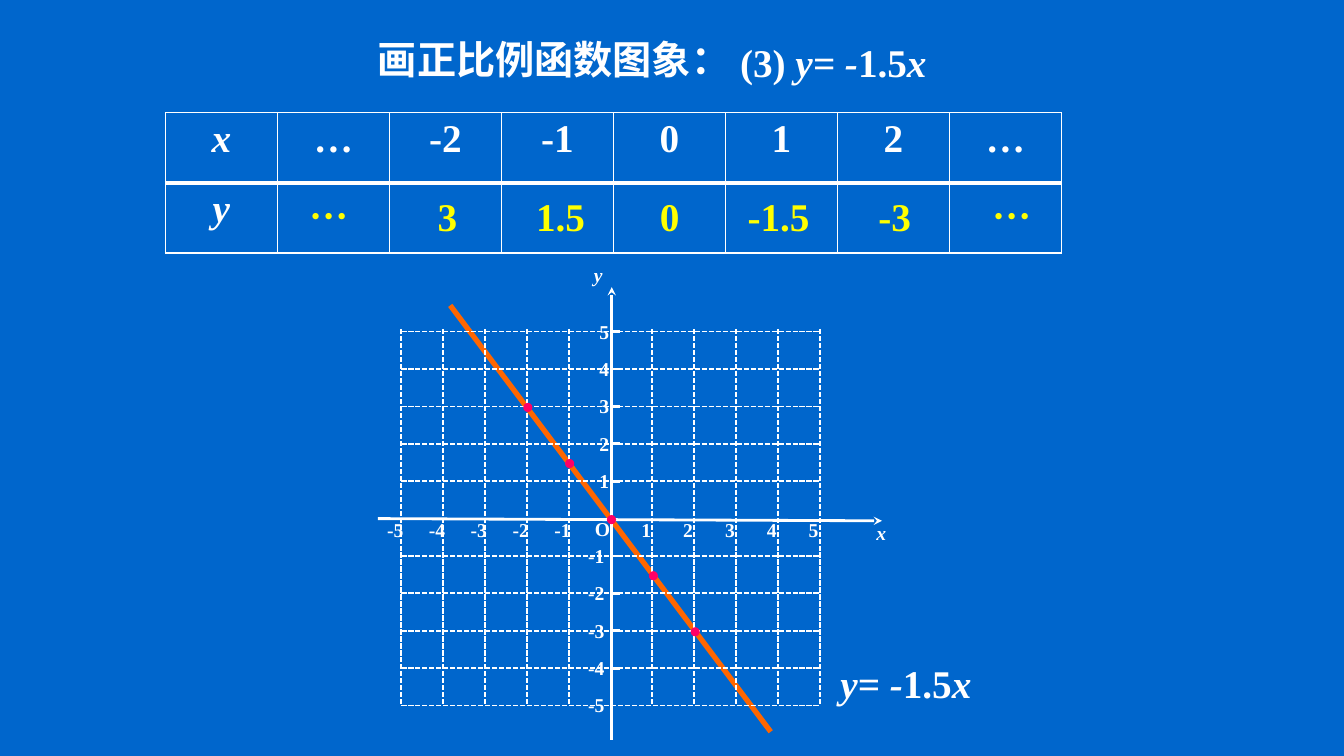
from lxml import etree
from pptx import Presentation
from pptx import util as u
from pptx.dml.color import RGBColor
from pptx.enum import dml, shapes, text
from pptx.oxml import ns

BLUE = RGBColor(0x00, 0x66, 0xCC)
WHITE = RGBColor(0xFF, 0xFF, 0xFF)
YELLOW = RGBColor(0xFF, 0xFF, 0x00)
ORANGE = RGBColor(0xFF, 0x66, 0x00)
PINK = RGBColor(0xFF, 0x00, 0x66)
SERIF = "Times New Roman"
HAN = "Noto Sans CJK SC"
LEFT, MID = text.PP_ALIGN.LEFT, text.PP_ALIGN.CENTER
RULE = [("y= -", True), ("1.5", False), ("x", True)]


def sub(node, tag, **attrs):
    """Append a drawing element to a node."""
    return etree.SubElement(node, ns.qn(tag), **attrs)


def style(para, size, color=WHITE, face=SERIF, align=MID):
    """Set the bold font and alignment of a paragraph."""
    font = para.font
    font.size, font.bold, font.name = u.Pt(size), True, face
    font.color.rgb = color
    para.alignment = align


def label(slide, box, runs, size, color=WHITE, face=SERIF, align=MID):
    """Write runs of (words, italic) in a text box."""
    frame = slide.shapes.add_textbox(*[u.Inches(v) for v in box]).text_frame
    frame.word_wrap = False
    para = frame.paragraphs[0]
    style(para, size, color, face, align)
    for words, slant in runs:
        run = para.add_run()
        run.text, run.font.italic = words, slant
        if face != SERIF:
            sub(run.font._element, "a:latin", typeface=face)
            sub(run.font._element, "a:ea", typeface=HAN)


def line(slide, start, end, width, color=WHITE, dash=False, arrow=False):
    """Draw a straight line between two points."""
    item = slide.shapes.add_connector(
        shapes.MSO_CONNECTOR.STRAIGHT, *[u.Inches(v) for v in (*start, *end)])
    item.line.width = u.Pt(width)
    item.line.color.rgb = color
    if dash:
        item.line.dash_style = dml.MSO_LINE.SQUARE_DOT
    if arrow:
        sub(item.line._get_or_add_ln(), "a:tailEnd", type="stealth")
    sub(item._element.spPr, "a:effectLst")


def edge(cell, widths):
    """Give a cell white borders in the order left, right, top, bottom."""
    props = cell._tc.get_or_add_tcPr()
    for spot, (side, width) in enumerate(zip("LRTB", widths)):
        ln = etree.Element(ns.qn(f"a:ln{side}"), w=str(u.Pt(width)))
        sub(sub(ln, "a:solidFill"), "a:srgbClr", val=str(WHITE))
        props.insert(spot, ln)


def title(slide, left, top):
    """Place the heading and its formula."""
    label(slide, (left, top, 9, 1.25), [("画正比例函数图象：", False)], 28,
          face="Arial", align=LEFT)
    label(slide, (left + 3.53, top + 0.03, 2.17, 0.57),
          [("(3) ", False)] + RULE, 28)


def values(slide, left, top, width, height):
    """Place the table of x and y with the answers over its second row."""
    heads = ["x", "…", "-2", "-1", "0", "1", "2", "…"]
    marks = ["…", "3", "1.5", "0", "-1.5", "-3", "…"]
    shifts = [-0.04, 0.02, 0.03, 0, -0.03, 0.01, 0.06]
    table = slide.shapes.add_table(
        2, len(heads), *[u.Inches(v) for v in (left, top, width, height)]).table
    table.first_row = table.horz_banding = False
    for row, words in enumerate([heads, ["y"] + [""] * 7]):
        for col, word in enumerate(words):
            cell = table.cell(row, col)
            cell.text = word
            cell.fill.background()
            para = cell.text_frame.paragraphs[0]
            style(para, 28)
            para.font.italic = col == 0
            edge(cell, (1, 1, 3, 1) if row else (1, 1, 1, 3))
    step = width / len(heads)
    for col, (mark, shift) in enumerate(zip(marks, shifts), 1):
        box = (left + col * step + shift, top + 0.53 * height, step, 0.57)
        label(slide, box, [(mark, False)], 28, YELLOW,
              HAN if mark == "…" else SERIF)


def graph(slide, left, top, width, height):
    """Draw the grid, axes, numbers, line and points of y = -1.5x."""
    def at(x, y):
        return left + (x + 5) * width / 10, top + (5 - y) * height / 10

    def note(x, y, word, slant=False):
        label(slide, (x - 0.2, y - 0.18, 0.4, 0.36), [(word, slant)], 14)

    line(slide, at(-3.83, 5.7), at(3.83, -5.7), 3.75, ORANGE)
    line(slide, at(-5.56, 0), at(6.49, -0.06), 2, arrow=True)
    line(slide, at(0.03, -5.92), at(0.03, 6.19), 2, arrow=True)
    zerox, zeroy = at(0, 0)
    for n in [*range(-5, 0), *range(1, 6)]:
        line(slide, at(-5, n), at(5, n), 1.25, dash=True)
        line(slide, at(n, 5.07), at(n, -5), 1.25, dash=True)
        if n > -5:
            line(slide, at(0.03, n), at(0.22, n), 2)
        x, y = at(n, n)
        note(x - 0.06, zeroy + 0.12, str(n))
        note(zerox - (0.06 if n > 0 else 0.14), y + 0.01, str(n))
    note(zerox - 0.08, zeroy + 0.11, "O")
    note(zerox - 0.12, top - 0.55, "y", True)
    note(left + width + 0.61, zeroy + 0.15, "x", True)
    for n in range(-2, 3):
        x, y = at(n, -1.5 * n)
        dot = slide.shapes.add_shape(
            shapes.MSO_SHAPE.FLOWCHART_CONNECTOR,
            *[u.Inches(v) for v in (x - 0.03, y - 0.03, 0.08, 0.08)])
        dot.shadow.inherit = False
        dot.fill.solid()
        dot.fill.fore_color.rgb = dot.line.color.rgb = PINK
        dot.line.width = u.Pt(0.75)
    label(slide, (left + width + 0.05, top + 3.2, 1.61, 0.57), RULE, 28)


def main():
    """Build and save the slide."""
    deck = Presentation()
    deck.slide_width, deck.slide_height = u.Inches(13.33), u.Inches(7.5)
    slide = deck.slides.add_slide(deck.slide_layouts[6])
    slide.background.fill.solid()
    slide.background.fill.fore_color.rgb = BLUE
    title(slide, 3.65, 0.3)
    values(slide, 1.64, 1.12, 8.89, 1.39)
    graph(slide, 3.98, 3.29, 4.15, 3.71)
    deck.save("out.pptx")


if __name__ == "__main__":
    main()
